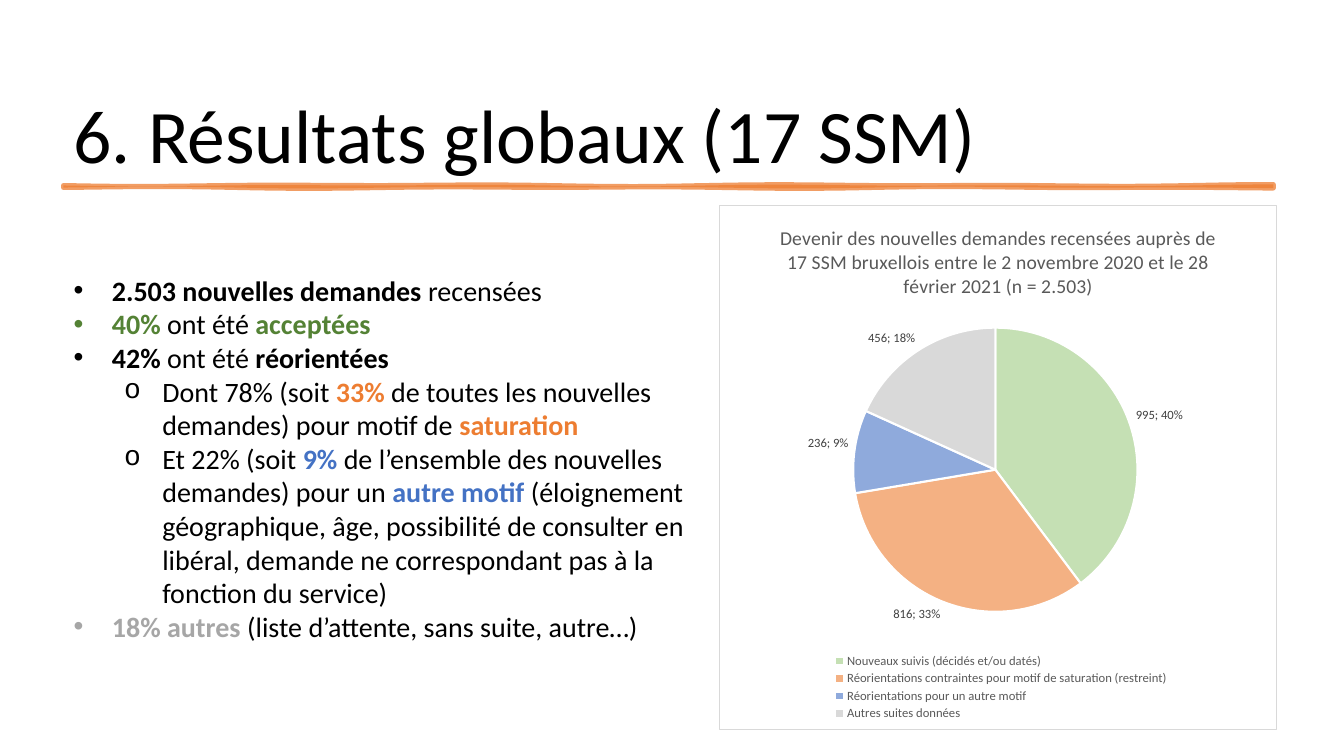
from dataclasses import dataclass
from math import sin
from lxml.etree import SubElement as Sub
from pptx import Presentation
from pptx.chart.data import CategoryChartData as Data
from pptx.dml.color import RGBColor as RGB
from pptx.enum.chart import XL_CHART_TYPE as Kind, XL_LABEL_POSITION as Spot, XL_LEGEND_POSITION as Side
from pptx.enum.text import MSO_ANCHOR as Anchor, MSO_AUTO_SIZE as Fit, PP_ALIGN as Align
from pptx.oxml import parse_xml
from pptx.oxml.ns import nsdecls, qn
from pptx.util import Inches, Pt

CELL = Inches(0.1)


@dataclass(frozen=True)
class Theme:
    font: str = "Calibri"
    ink: str = "000000"
    paper: str = "FFFFFF"
    green: str = "548235"
    orange: str = "ED7D31"
    blue: str = "4472C4"
    gray: str = "A6A6A6"
    soft: str = "595959"
    dark: str = "404040"
    edge: str = "D9D9D9"
    pie: tuple = ("C5E0B4", "F4B183", "8FAADC", "D9D9D9")
    head: int = 54
    body: int = 20
    cap: int = 14
    base: int = 10
    note: int = 9


@dataclass(frozen=True)
class Box:
    col: float
    row: float
    cols: float
    rows: float

    def emu(self):
        return [int(n * CELL) for n in (self.col, self.row, self.cols, self.rows)]


T = Theme()
TITLE = "6. Résultats globaux (17 SSM)"
ITEMS = [
    (0, [("2.503 nouvelles demandes ", T.ink, True), ("recensées", T.ink, False)]),
    (0, [("40% ", T.green, True), ("ont été ", T.ink, False), ("acceptées", T.green, True)]),
    (0, [("42%", T.ink, True), (" ont été ", T.ink, False), ("réorientées", T.ink, True)]),
    (1, [("Dont 78% (soit ", T.ink, False), ("33%", T.orange, True),
         (" de toutes les nouvelles demandes) pour motif de ", T.ink, False),
         ("saturation", T.orange, True)]),
    (1, [("Et 22% (soit ", T.ink, False), ("9%", T.blue, True),
         (" de l’ensemble des nouvelles demandes) pour un ", T.ink, False),
         ("autre motif ", T.blue, True),
         ("(éloignement géographique, âge, possibilité de consulter en libéral, "
          "demande ne correspondant pas à la fonction du service)", T.ink, False)]),
    (0, [("18% autres ", T.gray, True),
         ("(liste d’attente, sans suite, autre…)", T.ink, False)]),
]
CAPTION = ("Devenir des nouvelles demandes recensées auprès de 17 SSM bruxellois "
           "entre le 2 novembre 2020 et le 28 février 2021 (n = 2.503)")
FATES = {
    "Nouveaux suivis (décidés et/ou datés)": 995,
    "Réorientations contraintes pour motif de saturation (restreint)": 816,
    "Réorientations pour un autre motif": 236,
    "Autres suites données": 456,
}


def style(font, size, color, bold=False):
    font.name, font.size, font.bold = T.font, Pt(size), bold
    font.color.rgb = RGB.from_string(color)


def add_run(para, text, *look):
    run = para.add_run()
    run.text = text
    style(run.font, *look)


def place(shape, box):
    shape.left, shape.top, shape.width, shape.height = box.emu()


def add_title(slide, box):
    shape = slide.shapes.title
    place(shape, box)
    frame = shape.text_frame
    frame.auto_size, frame.vertical_anchor = Fit.NONE, Anchor.BOTTOM
    para = frame.paragraphs[0]
    para.alignment, para.line_spacing = Align.LEFT, 0.9
    add_run(para, TITLE, T.head, T.ink)


def add_brush(slide, box):
    left, top, wide, high = box.emu()
    steps = 120

    def edge(i, base, phase):
        wave = sin(i / 4 + phase) + sin(i / 7 + 2 * phase)
        return left + wide * i // steps, int(top + high * (base + wave / 4))

    upper = [edge(i, 0, 0) for i in range(steps + 1)]
    lower = [edge(i, 1, 2) for i in range(steps, -1, -1)]
    pen = slide.shapes.build_freeform(*upper[0])
    pen.add_line_segments(upper[1:] + lower, close=True)
    shape = pen.convert_to_shape()
    shape.shadow.inherit = False
    shape.fill.solid()
    shape.line.fill.solid()
    shape.line.width = Pt(3.5)
    for fill in (shape.fill, shape.line.fill):
        fill.fore_color.rgb = RGB.from_string(T.orange)
    for tint in shape._element.spPr.iter(qn("a:srgbClr")):
        Sub(tint, qn("a:alpha"), val="75000")


def add_list(slide, box):
    shape = slide.placeholders[1]
    place(shape, box)
    frame = shape.text_frame
    frame.auto_size, frame.vertical_anchor = Fit.NONE, Anchor.TOP
    for i, (level, parts) in enumerate(ITEMS):
        para = frame.add_paragraph() if i else frame.paragraphs[0]
        para.level = level
        para.space_before = para.space_after = Pt(0)
        props = para._p.get_or_add_pPr()
        props.set("marL", str(Inches(0.38 + level / 2)))
        props.set("indent", str(Inches(-0.38)))
        Sub(props, qn("a:buFont"), typeface=("Arial", "Courier New")[level])
        Sub(props, qn("a:buChar"), char="•o"[level])
        for text, color, bold in parts:
            add_run(para, text, T.body, color, bold)


def layout(x, y, w, h, inner=False):
    target = '<c:layoutTarget val="inner"/>' if inner else ""
    modes = '<c:xMode val="edge"/><c:yMode val="edge"/>'
    sizes = "".join(f'<c:{k} val="{v}"/>' for k, v in zip("xywh", (x, y, w, h)))
    return parse_xml(f'<c:layout {nsdecls("c")}><c:manualLayout>{target}{modes}{sizes}'
                     '</c:manualLayout></c:layout>')


def add_pie(slide, box):
    data = Data()
    data.categories = list(FATES)
    data.add_series("Series 1", list(FATES.values()))
    chart = slide.shapes.add_chart(Kind.PIE, *box.emu(), data).chart
    style(chart.font, T.base, T.ink)
    chart.has_title = True
    add_run(chart.chart_title.text_frame.paragraphs[0], CAPTION, T.cap, T.soft)
    chart.chart_title.include_in_layout = False

    chart.has_legend = True
    key = chart.legend
    key.position, key.include_in_layout = Side.BOTTOM, False
    style(key.font, T.note, T.soft)
    for old in key._element.findall(qn("c:layout")):
        key._element.remove(old)
    key._element.find(qn("c:legendPos")).addnext(layout(0.2, 0.85, 0.61, 0.14))

    plot = chart.plots[0]
    plot.vary_by_categories = True
    area = plot._element.getparent()
    for old in area.findall(qn("c:layout")):
        area.remove(old)
    area.insert(0, layout(0.24, 0.23, 0.51, 0.55, True))
    for i, color in enumerate(T.pie):
        look = plot.series[0].points[i].format
        look.fill.solid()
        look.fill.fore_color.rgb = RGB.from_string(color)
        look.line.color.rgb = RGB.from_string(T.paper)
        look.line.width = Pt(1.5)

    plot.has_data_labels = True
    tags = plot.data_labels
    tags.show_value = tags.show_percentage = True
    tags.position = Spot.OUTSIDE_END
    style(tags.font, T.note, T.dark)
    mark = parse_xml(f'<c:separator {nsdecls("c")}>; </c:separator>')
    flags = [e for e in tags._element if e.tag.split("}")[1].startswith("show")
             and e.tag != qn("c:showLeaderLines")]
    flags[-1].addnext(mark)

    root = chart._chartSpace
    root.find(qn("c:chart")).addnext(parse_xml(
        f'<c:spPr {nsdecls("c", "a")}><a:solidFill><a:srgbClr val="{T.paper}"/></a:solidFill>'
        f'<a:ln w="{Pt(0.75)}"><a:solidFill><a:srgbClr val="{T.edge}"/></a:solidFill></a:ln></c:spPr>'))


def main():
    deck = Presentation()
    deck.slide_width, deck.slide_height = Inches(13.33), Inches(7.5)
    slide = deck.slides.add_slide(deck.slide_layouts[1])
    add_title(slide, Box(6.3, 2.6, 120.5, 15.7))
    add_brush(slide, Box(6.3, 18.4, 120, 0.2))
    add_pie(slide, Box(71.3, 20.3, 55.4, 52.1))
    add_list(slide, Box(6.3, 26.6, 66.7, 38))
    deck.save("out.pptx")


if __name__ == "__main__":
    main()
